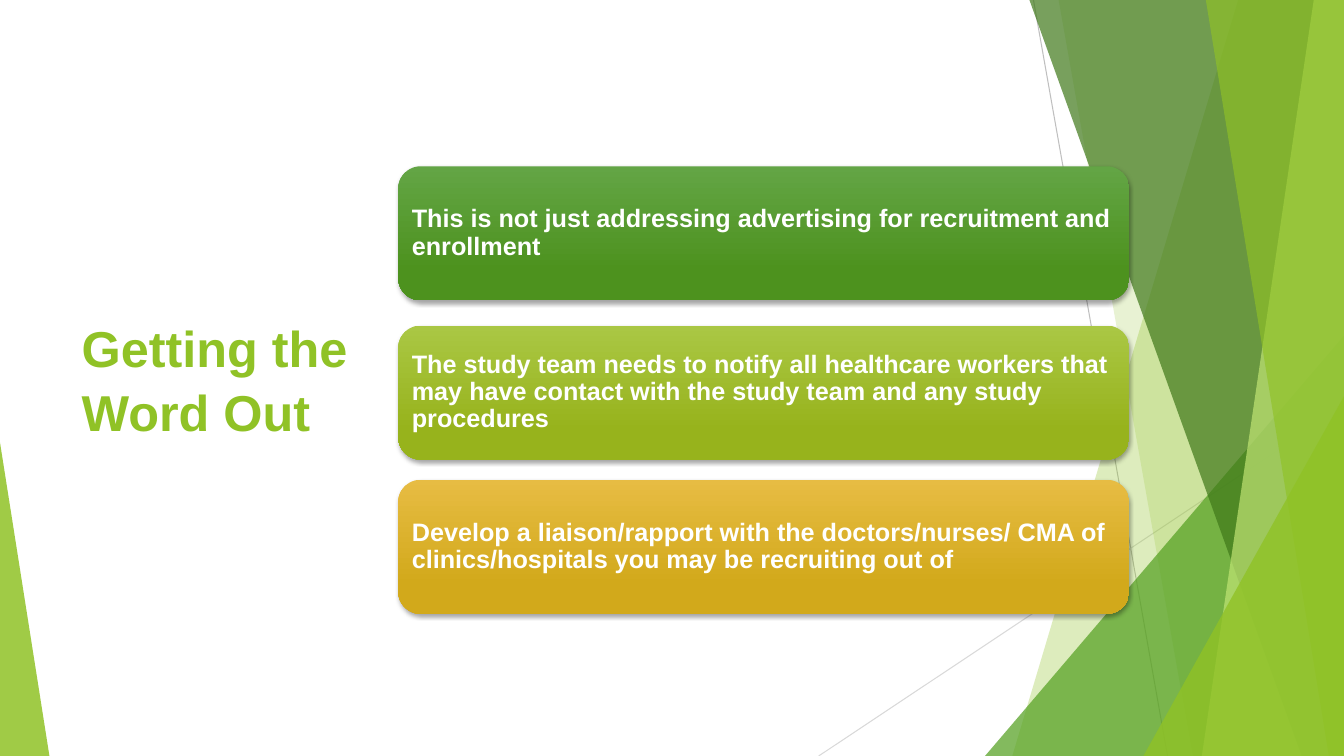
from dataclasses import dataclass

from lxml.etree import SubElement
from pptx import Presentation
from pptx.dml.color import RGBColor
from pptx.enum.shapes import MSO_CONNECTOR, MSO_SHAPE
from pptx.enum.text import MSO_ANCHOR, MSO_AUTO_SIZE, PP_ALIGN
from pptx.oxml.ns import qn
from pptx.util import Inches, Pt


@dataclass(frozen=True)
class Theme:
    font: str = "Arial"
    title_size: int = 36
    card_size: int = 18
    lime: str = "90C226"
    pale_lime: str = "C0E474"
    green: str = "54A021"
    dark_green: str = "3F7819"
    white: str = "FFFFFF"
    shadow: str = "000000"
    gray: str = "BFBFBF"
    light_gray: str = "D9D9D9"


THEME = Theme()
WIDTH, HEIGHT = 13.33, 7.5

# Content: card top, gradient start, gradient end, wording
TITLE = "Getting the Word Out"
CARDS = [
    (1.65, "63A545", "4D921E",
     "This is not just addressing advertising for recruitment and enrollment"),
    (3.23, "AAC744", "97B31C",
     "The study team needs to notify all healthcare workers that may have "
     "contact with the study team and any study procedures"),
    (4.76, "E7BC43", "D2A91B",
     "Develop a liaison/rapport with the doctors/nurses/ CMA of "
     "clinics/hospitals you may be recruiting out of"),
]
CARD_LEFT, CARD_WIDTH, CARD_HEIGHT = 3.95, 7.25, 1.33

# Decoration, from back to front
LINES = [
    ((10.25, 0), (11.58, HEIGHT), THEME.gray),
    ((WIDTH, 4.03), (8.12, HEIGHT), THEME.light_gray),
]
# Bands reach the right edge: ("band", top left x, bottom left x, colour, opacity)
# Triangles stand on the bottom: ("triangle", left, width, height, apex, colour, opacity)
FACETS = [
    ("band", 12.28, 10.04, THEME.lime, 30),
    ("band", 10.5, 11.83, THEME.lime, 20),
    ("triangle", 9.77, 3.56, 4.17, 1, THEME.green, 72),
    ("band", 10.21, 12.91, THEME.dark_green, 70),
    ("band", 13.03, 11.92, THEME.pale_lime, 70),
    ("band", 11.96, 13.18, THEME.lime, 65),
    ("triangle", 11.34, 1.99, 3.57, 1, THEME.lime, 80),
    ("triangle", 0, 0.49, 3.11, 0, THEME.lime, 85),
]


def color(code):
    return RGBColor.from_string(code)


def write_text(frame, text, *, size, ink, spacing, inset):
    frame.word_wrap = True
    frame.auto_size = MSO_AUTO_SIZE.NONE
    frame.vertical_anchor = MSO_ANCHOR.MIDDLE
    frame.margin_left = frame.margin_right = Inches(inset)
    frame.margin_top = frame.margin_bottom = Inches(inset)
    para = frame.paragraphs[0]
    para.alignment = PP_ALIGN.LEFT
    para.line_spacing = spacing
    span = para.add_run()
    span.text = text
    span.font.name = THEME.font
    span.font.size = Pt(size)
    span.font.bold = True
    span.font.color.rgb = color(ink)


def paint(shape, code, opacity):
    shape.shadow.inherit = False
    shape.line.fill.background()
    shape.fill.solid()
    shape.fill.fore_color.rgb = color(code)
    tint = shape._element.spPr.find(qn("a:solidFill"))[0]
    SubElement(tint, qn("a:alpha"), val=str(opacity * 1000))


def add_line(page, start, end, code):
    points = [Inches(value) for value in (*start, *end)]
    line = page.shapes.add_connector(MSO_CONNECTOR.STRAIGHT, *points)
    line.line.color.rgb = color(code)
    line.line.width = Pt(0.75)
    SubElement(line._element.spPr, qn("a:effectLst"))


def add_band(page, top_left, bottom_left, code, opacity):
    builder = page.shapes.build_freeform(Inches(top_left), 0)
    corners = [(WIDTH, 0), (WIDTH, HEIGHT), (bottom_left, HEIGHT)]
    builder.add_line_segments([(Inches(x), Inches(y)) for x, y in corners])
    paint(builder.convert_to_shape(), code, opacity)


def add_triangle(page, left, width, height, apex, code, opacity):
    triangle = page.shapes.add_shape(
        MSO_SHAPE.ISOSCELES_TRIANGLE, Inches(left), Inches(HEIGHT - height),
        Inches(width), Inches(height))
    triangle.adjustments[0] = apex
    paint(triangle, code, opacity)


def add_card(page, top, start, end, text):
    card = page.shapes.add_shape(
        MSO_SHAPE.ROUNDED_RECTANGLE, Inches(CARD_LEFT), Inches(top),
        Inches(CARD_WIDTH), Inches(CARD_HEIGHT))
    card.line.fill.background()
    card.fill.gradient()
    card.fill.gradient_angle = 270
    for stop, position, code in zip(card.fill.gradient_stops, (0, 0.78), (start, end)):
        stop.position = position
        stop.color.rgb = color(code)

    # Soft shadow straight below
    card.shadow.inherit = False
    effects = card._element.spPr.find(qn("a:effectLst"))
    shadow = SubElement(effects, qn("a:outerShdw"), blurRad=str(Pt(3)),
                        dist=str(Pt(2)), dir="5400000", rotWithShape="0")
    tint = SubElement(shadow, qn("a:srgbClr"), val=THEME.shadow)
    SubElement(tint, qn("a:alpha"), val="35000")

    write_text(card.text_frame, text, size=THEME.card_size, ink=THEME.white,
               spacing=0.9, inset=0.07)


def main():
    deck = Presentation()
    deck.slide_width, deck.slide_height = Inches(WIDTH), Inches(HEIGHT)
    page = deck.slides.add_slide(deck.slide_layouts[5])

    # Background facets
    for line in LINES:
        add_line(page, *line)
    makers = {"band": add_band, "triangle": add_triangle}
    for kind, *details in FACETS:
        makers[kind](page, *details)

    # Title
    title = page.shapes.title
    title.left, title.top = Inches(0.71), Inches(1.51)
    title.width, title.height = Inches(3.88), Inches(4.48)
    write_text(title.text_frame, TITLE, size=THEME.title_size, ink=THEME.lime,
               spacing=1.05, inset=0.1)

    # Cards
    for card in CARDS:
        add_card(page, *card)

    deck.save("out.pptx")


if __name__ == "__main__":
    main()
